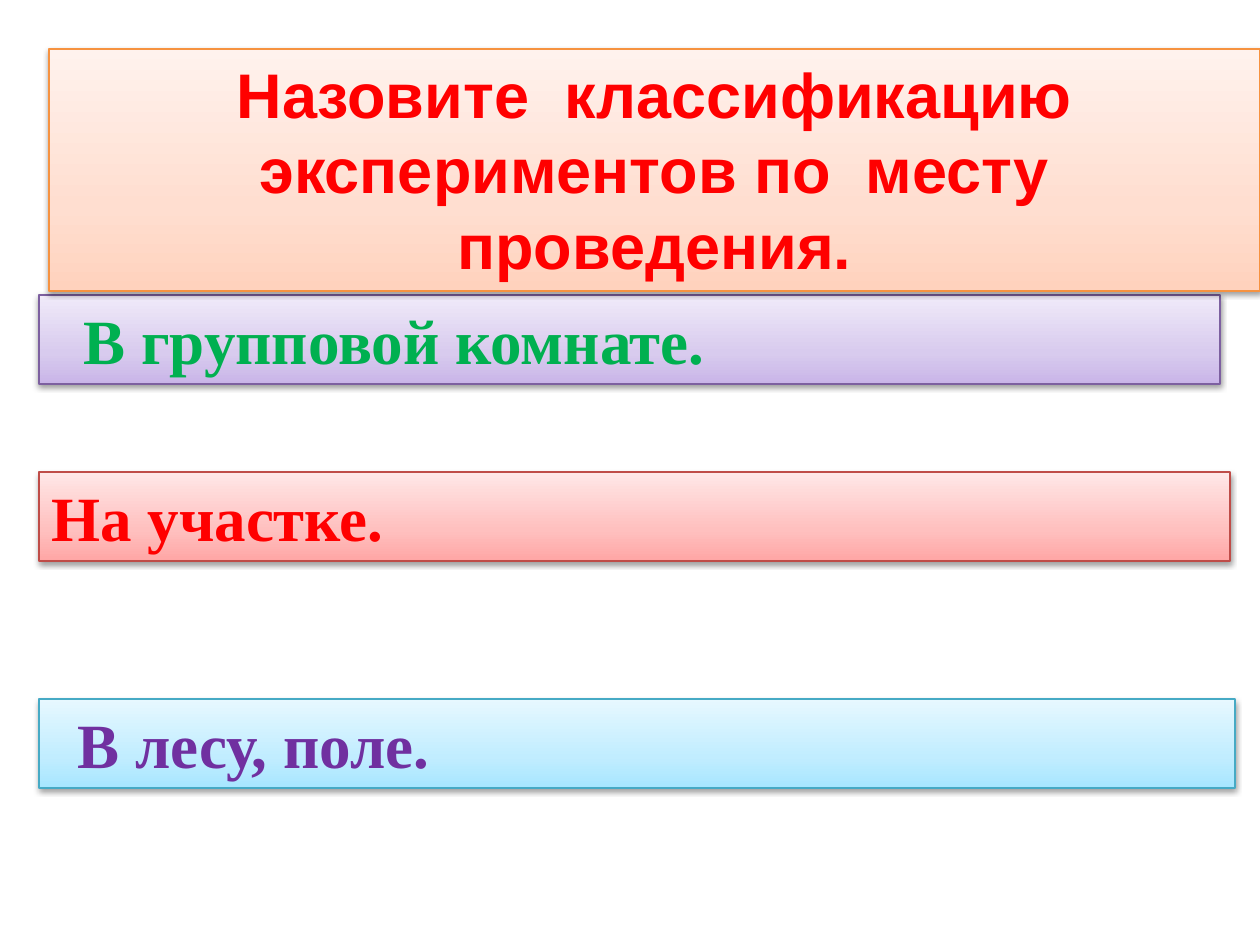
from lxml import etree
from pptx import Presentation
from pptx import util as u
from pptx.dml.color import RGBColor
from pptx.enum import shapes, text
from pptx.oxml.ns import qn

SCALE = 914400 / 126
COLORS = {
    "red": "FF0000",
    "green": "00B050",
    "purple": "7030A0",
    "shadow": "000000",
}
# Each theme: line colour, then gradient colours from bottom to top
THEMES = {
    "violet": ("7D60A0", ("C9B5E8", "D8CBEE", "F0EAF9")),
    "rose": ("BF4C48", ("FFA6A5", "FFC0BF", "FFE7E7")),
    "sky": ("46AAC5", ("A7E6FF", "C1EDFF", "E7F8FF")),
    "peach": ("F69240", ("FFD2BD", "FFDED0", "FFF2ED")),
}
STOPS = (0, 35, 100)
ALIGN = text.PP_ALIGN


def px(length):
    return u.Emu(round(length * SCALE))


def add_child(parent, tag, **attributes):
    values = {name: str(value) for name, value in attributes.items()}
    return etree.SubElement(parent, qn(tag), values)


def write_text(shape, content, *, font="Times New Roman", size=36,
               color="red", align=ALIGN.LEFT, indent=0):
    frame = shape.text_frame
    frame.word_wrap = True
    frame.auto_size = text.MSO_AUTO_SIZE.SHAPE_TO_FIT_TEXT
    frame.vertical_anchor = text.MSO_ANCHOR.TOP
    frame.margin_left = u.Inches(0.1) + px(indent)
    paragraph = frame.paragraphs[0]
    paragraph.alignment = align
    run = paragraph.add_run()
    run.text = content
    run.font.name = font
    run.font.size = u.Pt(size)
    run.font.bold = True
    run.font.color.rgb = RGBColor.from_string(COLORS[color])


class SlideBuilder:
    def __init__(self, slide, line_width=0.75):
        self.slide = slide
        self.line_width = line_width

    def gradient(self, shape, colors):
        """Fill the shape with a vertical gradient that starts at the bottom."""
        shape.fill.gradient()
        shape.fill.gradient_angle = 90
        stop_list = shape._element.spPr.find(".//" + qn("a:gsLst"))
        for stop in list(stop_list):
            stop_list.remove(stop)
        for position, color in zip(STOPS, colors):
            stop = add_child(stop_list, "a:gs", pos=position * 1000)
            add_child(stop, "a:srgbClr", val=color)

    def shadow(self, shape):
        shape.shadow.inherit = False
        effects = shape._element.spPr.find(qn("a:effectLst"))
        outer = add_child(effects, "a:outerShdw", blurRad=40000, dist=20000,
                          dir=5400000, rotWithShape=0)
        color = add_child(outer, "a:srgbClr", val=COLORS["shadow"])
        add_child(color, "a:alpha", val=38000)

    def panel(self, content, left, top, width, height, theme, **text_format):
        line_color, fill_colors = THEMES[theme]
        shape = self.slide.shapes.add_shape(
            shapes.MSO_SHAPE.RECTANGLE,
            px(left), px(top), px(width), px(height))
        self.gradient(shape, fill_colors)
        shape.line.color.rgb = RGBColor.from_string(line_color)
        shape.line.width = u.Pt(self.line_width)
        self.shadow(shape)
        write_text(shape, content, **text_format)


def main():
    presentation = Presentation()
    presentation.slide_width = px(1260)
    presentation.slide_height = px(945)
    slide = presentation.slides.add_slide(presentation.slide_layouts[6])
    builder = SlideBuilder(slide)

    answers = [
        ("В групповой комнате.", 295, 1181, "violet", "green", ALIGN.LEFT, 32),
        ("На участке.", 472, 1191, "rose", "red", ALIGN.JUSTIFY, 0),
        ("В лесу, поле.", 699, 1196, "sky", "purple", ALIGN.JUSTIFY, 26),
    ]
    for content, top, width, theme, color, align, indent in answers:
        builder.panel(content, 39, top, width, 89, theme,
                      color=color, align=align, indent=indent)

    builder.panel("Назовите  классификацию экспериментов по  месту проведения.",
                  49, 49, 1211, 242, "peach", font="Arial", align=ALIGN.CENTER)
    presentation.save("out.pptx")


if __name__ == "__main__":
    main()
